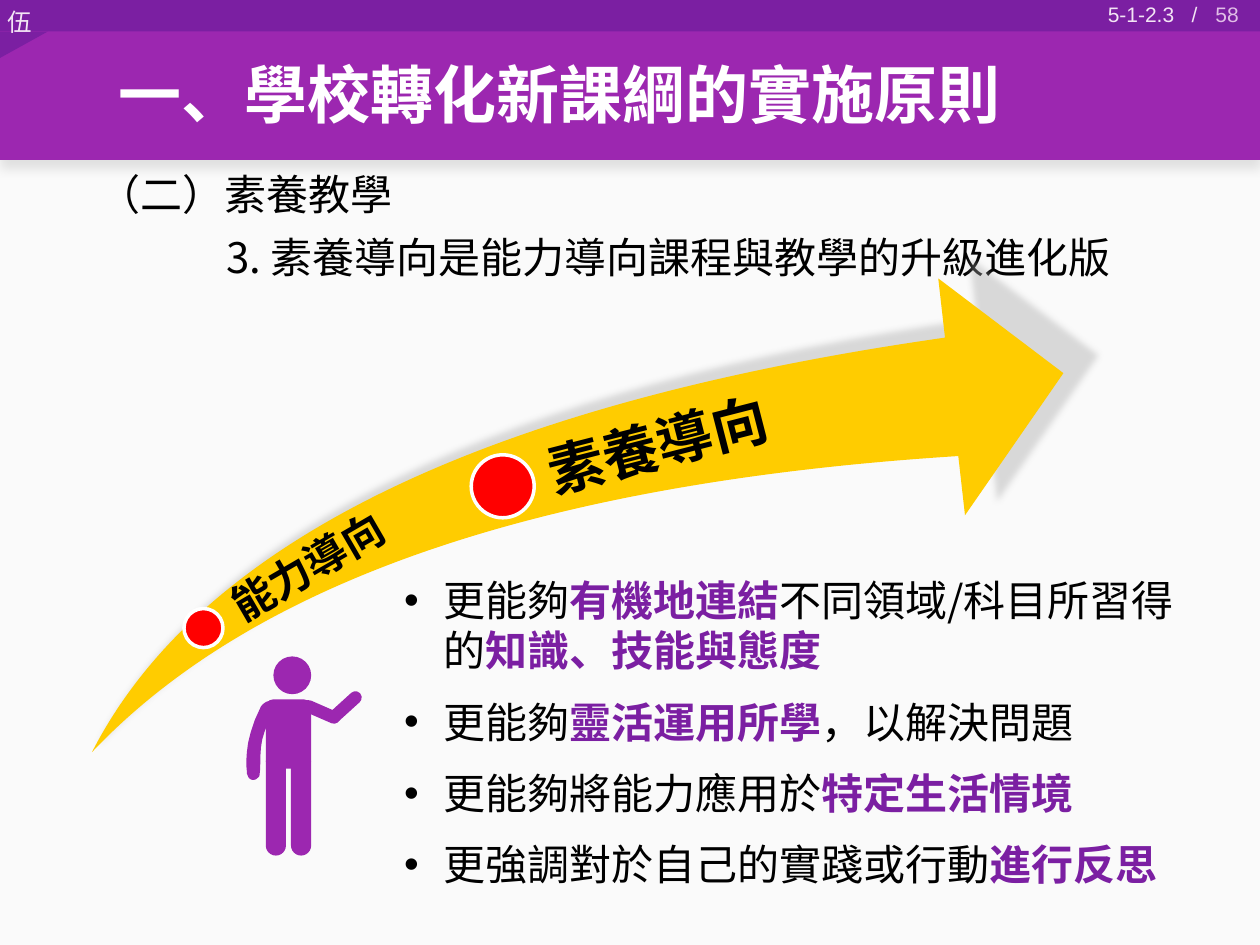
from lxml import etree
from pptx import Presentation
from pptx.dml.color import RGBColor
from pptx.enum.shapes import MSO_SHAPE
from pptx.enum.text import MSO_ANCHOR, PP_ALIGN
from pptx.oxml.ns import qn
from pptx.util import Inches, Pt

RECT, ROUND = MSO_SHAPE.RECTANGLE, MSO_SHAPE.ROUNDED_RECTANGLE
OVAL, SWOOSH = MSO_SHAPE.OVAL, MSO_SHAPE.SWOOSH_ARROW
TOP, MID = MSO_ANCHOR.TOP, MSO_ANCHOR.MIDDLE
LEFT, MIDDLE, RIGHT = PP_ALIGN.LEFT, PP_ALIGN.CENTER, PP_ALIGN.RIGHT

BLACK, WHITE = RGBColor(0, 0, 0), RGBColor(255, 255, 255)
PAPER = RGBColor(0xFA, 0xFA, 0xFA)
PURPLE, DEEP = RGBColor(0x9C, 0x27, 0xB0), RGBColor(0x7B, 0x1F, 0xA2)
PALE, LILAC = RGBColor(0xF3, 0xE5, 0xF5), RGBColor(0xE1, 0xBE, 0xE7)
GOLD, RED = RGBColor(0xFF, 0xCC, 0), RGBColor(255, 0, 0)
CJK, SANS = "Noto Sans CJK SC", "Arial"
WIDE, HIGH = 10, 7.5

# text, box, format
LABELS = [
    ("伍", (-0.04, 0.01, 0.4, 0.34), dict(size=14, color=PALE, wrap=False)),
    ("（二）素養教學", (0.68, 1.29, 5.71, 0.5), {}),
    ("3. 素養導向是能力導向課程與教學的升級進化版", (1.7, 1.79, 7.56, 0.5), {}),
    ("58", (7.6, -0.09, 2.33, 0.4),
     dict(size=12, font=SANS, color=LILAC, align=RIGHT, anchor=MID)),
    ("5-1-2.3   / ", (8.51, -0.04, 1.14, 0.3),
     dict(size=12, font=SANS, color=PALE, align=RIGHT)),
]
TITLE = "一、學校轉化新課綱的實施原則"
# Every second part of a point is stressed
POINTS = [
    ("更能夠", "有機地連結", "不同領域/科目所習得的", "知識、技能與態度"),
    ("更能夠", "靈活運用所學", "，以解決問題"),
    ("更能夠將能力應用於", "特定生活情境"),
    ("更強調對於自己的實踐或行動", "進行反思"),
]
STAGES = [
    ("素養導向", (4.13, 3.23, 2.39, 0.74), dict(size=32, turn=-14.5)),
    ("能力導向", (1.34, 4.31, 2.26, 0.9),
     dict(size=24, turn=-30.1, align=MIDDLE)),
]
DOTS = [(1.46, 4.83, 0.31), (3.74, 3.61, 0.5)]
# kind, box, corner, turn
PERSON = [
    (OVAL, (2.17, 5.21, 0.3, 0.3), None, 0),
    (ROUND, (2.11, 5.55, 0.36, 0.55), None, 0),
    (ROUND, (2.11, 5.97, 0.16, 0.82), 0.5, 0),
    (ROUND, (2.31, 5.97, 0.16, 0.82), 0.5, 0),
    (ROUND, (2.69, 5.45, 0.1, 0.32), 0.5, 47.7),
    (ROUND, (2.5, 5.49, 0.1, 0.32), 0.5, -66.4),
]
# Start, then control, control and end of each curve
ARM = [(2.18, 5.65),
       (2.2, 5.6), (2.19, 5.57), (2.17, 5.57),
       (2.13, 5.55), (2.09, 5.58), (2.07, 5.61),
       (1.92, 5.9), (1.96, 6.11), (1.96, 6.14),
       (1.97, 6.17), (1.98, 6.19), (2.01, 6.19),
       (2.03, 6.19), (2.06, 6.17), (2.06, 6.15),
       (2.08, 6.02), (2.03, 5.87), (2.18, 5.65)]
CORNER = [(0, 0.25), (0.38, 0.25), (0, 0.46)]


def shade(color, alpha, blur, dist, angle, scale=100):
    """Return an effect list with one outer shadow."""
    fx = etree.Element(qn("a:effectLst"))
    cast = etree.SubElement(
        fx, qn("a:outerShdw"), blurRad=str(Pt(blur)), dist=str(Pt(dist)),
        dir=str(angle * 60000), sx=str(scale * 1000), sy=str(scale * 1000),
        algn="bl", rotWithShape="0")
    tint = etree.SubElement(cast, qn("a:srgbClr"), val=str(color))
    etree.SubElement(tint, qn("a:alpha"), val=str(alpha * 1000))
    return fx


def paint(shape, fill, line=None, glow=None):
    shape.fill.solid()
    shape.fill.fore_color.rgb = fill
    if line:
        shape.line.color.rgb = line
        shape.line.width = Pt(2)
    else:
        shape.line.fill.background()
    shape.shadow.inherit = False
    if glow is not None:
        props = shape.element.spPr
        props.replace(props.find(qn("a:effectLst")), glow)


def draw(slide, kind, box, fill, line=None, glow=None, corner=None, turn=0):
    shape = slide.shapes.add_shape(kind, *map(Inches, box))
    if corner is not None:
        shape.adjustments[0] = corner
    shape.rotation = turn
    paint(shape, fill, line, glow)
    return shape


def outline(slide, points, fill):
    spots = [(round(x * 1000), round(y * 1000)) for x, y in points]
    form = slide.shapes.build_freeform(*spots[0], scale=914.4)
    form.add_line_segments(spots[1:], close=True)
    paint(form.convert_to_shape(), fill)


def curve(knots, steps=8):
    """Turn a chain of cubic curves into points."""
    points = [knots[0]]
    for i in range(0, len(knots) - 1, 3):
        part = knots[i:i + 4]
        for n in range(1, steps + 1):
            t = n / steps
            mix = ((1 - t) ** 3, 3 * t * (1 - t) ** 2,
                   3 * t * t * (1 - t), t ** 3)
            points.append(tuple(sum(m * p[k] for m, p in zip(mix, part))
                                for k in (0, 1)))
    return points


def frame(slide, box, wrap=True, anchor=TOP, turn=0, pad=None):
    shape = slide.shapes.add_textbox(*map(Inches, box))
    shape.rotation = turn
    text = shape.text_frame
    text.word_wrap, text.vertical_anchor = wrap, anchor
    if pad:
        sides = ("left", "top", "right", "bottom")
        for side, gap in zip(sides, pad):
            setattr(text, "margin_" + side, Inches(gap))
    return text


def write(para, words, size=24, font=CJK, color=BLACK, bold=False):
    run = para.add_run()
    run.text = words
    for key, value in dict(size=Pt(size), name=font, bold=bold).items():
        setattr(run.font, key, value)
    run.font.color.rgb = color
    props = run.font._element if hasattr(run.font, "_element") else run._r.rPr
    etree.SubElement(props, qn("a:ea"), typeface=font)
    return props


def label(slide, words, box, align=LEFT, wrap=True, anchor=TOP, turn=0,
          pad=None, **style):
    para = frame(slide, box, wrap, anchor, turn, pad).paragraphs[0]
    para.alignment = align
    return write(para, words, **style)


def bullet(para):
    props = para._p.get_or_add_pPr()
    props.set("marL", str(Inches(0.31)))
    props.set("indent", str(Inches(-0.31)))
    etree.SubElement(props, qn("a:buFont"), typeface=SANS)
    etree.SubElement(props, qn("a:buChar"), char="•")


def main():
    deck = Presentation()
    deck.slide_width, deck.slide_height = Inches(WIDE), Inches(HIGH)
    slide = deck.slides.add_slide(deck.slide_layouts[6])
    slide.background.fill.solid()
    slide.background.fill.fore_color.rgb = PAPER

    draw(slide, RECT, (0, 0, WIDE, 1.27), PURPLE,
         glow=shade(BLACK, 10, 6, 4, 90))
    draw(slide, RECT, (0, 0, WIDE, 0.25), DEEP)
    outline(slide, CORNER, DEEP)
    for words, box, style in LABELS:
        label(slide, words, box, **style)
    props = label(slide, TITLE, (0.84, 0.21, 8.65, 1.06), anchor=MID,
                  size=36, color=WHITE, bold=True)
    props.find(qn("a:solidFill")).addnext(shade(BLACK, 30, 4, 3, 90))

    text = frame(slide, (3.11, 4.51, 6.49, 2.63))
    for i, parts in enumerate(POINTS):
        para = text.add_paragraph() if i else text.paragraphs[0]
        para.space_after = Pt(12)
        bullet(para)
        for n, words in enumerate(parts):
            write(para, words, color=DEEP if n % 2 else BLACK,
                  bold=n % 2 == 1)

    arrow = draw(slide, SWOOSH, (0.73, 2.21, 7.71, 3.76), GOLD, corner=0.25,
                 glow=shade(RGBColor(0xA6, 0xA6, 0xA6), 40, 4, 5, 315, 103))
    arrow.adjustments[1] = 0.25
    for x, y, size in DOTS:
        draw(slide, OVAL, (x, y, size, size), RED, line=WHITE)
    for words, box, style in STAGES:
        label(slide, words, box, bold=True, pad=(0.22, 0, 0, 0), **style)
    for kind, box, corner, turn in PERSON:
        draw(slide, kind, box, PURPLE, corner=corner, turn=turn)
    outline(slide, curve(ARM), PURPLE)
    deck.save("out.pptx")


if __name__ == "__main__":
    main()
